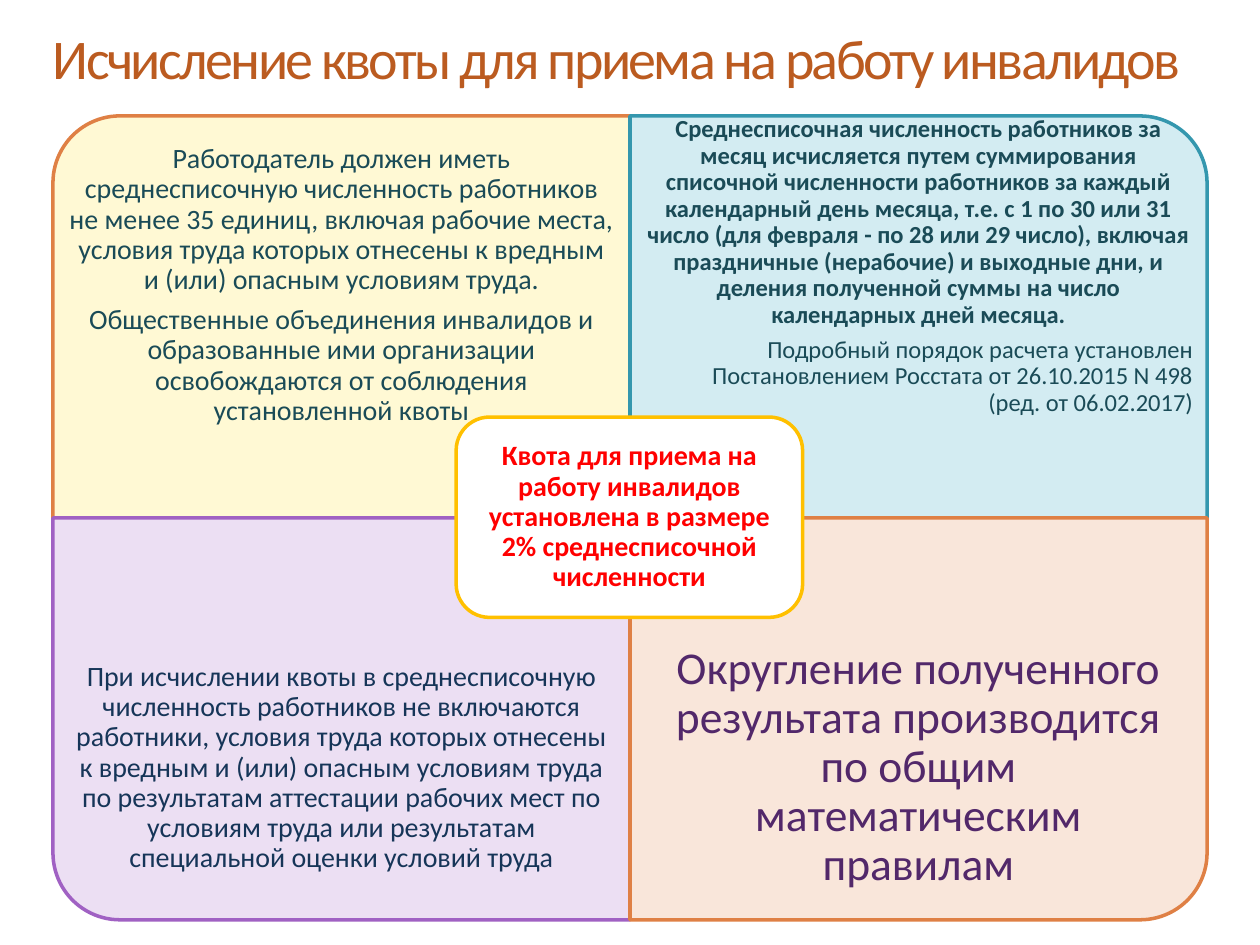
from dataclasses import dataclass

from pptx import Presentation
from pptx.dml.color import RGBColor
from pptx.enum.shapes import MSO_SHAPE
from pptx.enum.text import MSO_ANCHOR, MSO_AUTO_SIZE, PP_ALIGN
from pptx.util import Inches, Pt


@dataclass(frozen=True)
class Theme:
    font: str = "Calibri"
    title: str = "BB5B20"
    orange: str = "DF8045"
    teal: str = "3497AE"
    purple: str = "A061C3"
    gold: str = "FFC000"
    yellow_fill: str = "FFF9D4"
    teal_fill: str = "D3ECF2"
    purple_fill: str = "ECDFF3"
    orange_fill: str = "F9E6DA"
    white: str = "FFFFFF"
    teal_text: str = "1A4B57"
    navy_text: str = "163558"
    plum_text: str = "52286A"
    red_text: str = "FF0000"
    title_size: int = 32
    large_size: int = 26
    body_size: int = 16
    small_size: int = 14
    line_width: int = 2


theme = Theme()


def add_panel(kind, left, top, width, height, fill, line):
    shape = slide.shapes.add_shape(
        kind, Inches(left), Inches(top), Inches(width), Inches(height))
    shape.shadow.inherit = False
    shape.fill.solid()
    shape.fill.fore_color.rgb = RGBColor.from_string(fill)
    shape.line.color.rgb = RGBColor.from_string(line)
    shape.line.width = Pt(theme.line_width)
    return shape


def write_text(shape, paragraphs, size, color, inset):
    """Fill a shape with (text, alignment, bold) paragraphs."""
    frame = shape.text_frame
    frame.word_wrap = True
    frame.vertical_anchor = MSO_ANCHOR.MIDDLE
    frame.margin_left = frame.margin_right = Inches(inset)
    frame.margin_top = frame.margin_bottom = Inches(inset)
    for index, (text, alignment, bold) in enumerate(paragraphs):
        paragraph = frame.add_paragraph() if index else frame.paragraphs[0]
        paragraph.text = text
        paragraph.alignment = alignment
        paragraph.line_spacing = 0.9
        if index < len(paragraphs) - 1:
            paragraph.space_after = Pt(round(size * 0.35, 1))
        paragraph.font.name = theme.font
        paragraph.font.size = Pt(size)
        paragraph.font.bold = bold
        paragraph.font.color.rgb = RGBColor.from_string(color)


presentation = Presentation()
presentation.slide_width = Inches(10)
presentation.slide_height = Inches(7.5)
slide = presentation.slides.add_slide(presentation.slide_layouts[5])

# Title
title = slide.shapes.title
title.left, title.top = Inches(0.42), Inches(0.25)
title.width, title.height = Inches(9.17), Inches(0.48)
write_text(title, [("Исчисление квоты для приема на работу инвалидов", PP_ALIGN.LEFT, False)],
           theme.title_size, theme.title, 0)
title.text_frame.auto_size = MSO_AUTO_SIZE.NONE
title.text_frame.paragraphs[0].runs[0].font._element.set("spc", "-150")

# Four quadrants: column, row, rotation, fill, line, text top, inset, size, colour, paragraphs
left, top, width, height = 0.42, 0.92, 4.58, 3.19
text_height = 2.39
quadrants = [
    (0, 0, 270, theme.yellow_fill, theme.orange, 1.07, 0.12,
     theme.body_size, theme.teal_text, [
         ("Работодатель должен иметь среднесписочную численность работников "
          "не менее 35 единиц, включая рабочие места, условия труда которых "
          "отнесены к вредным и (или) опасным условиям труда.", PP_ALIGN.CENTER, False),
         ("Общественные объединения инвалидов и образованные ими организации "
          "освобождаются от соблюдения установленной квоты", PP_ALIGN.CENTER, False)]),
    (1, 0, 0, theme.teal_fill, theme.teal, 0.92, 0.11,
     theme.small_size, theme.teal_text, [
         ("Среднесписочная численность работников за месяц исчисляется путем "
          "суммирования списочной численности работников за каждый календарный "
          "день месяца, т.е. с 1 по 30 или 31 число (для февраля - по 28 или 29 "
          "число), включая праздничные (нерабочие) и выходные дни, и деления "
          "полученной суммы на число календарных дней месяца.", PP_ALIGN.CENTER, True),
         ("Подробный порядок расчета установлен Постановлением Росстата "
          "от 26.10.2015 N 498\v(ред. от 06.02.2017)", PP_ALIGN.RIGHT, False)]),
    (0, 1, 180, theme.purple_fill, theme.purple, 4.9, 0.12,
     theme.body_size, theme.navy_text, [
         ("При исчислении квоты в среднесписочную численность работников не "
          "включаются работники, условия труда которых отнесены к вредным и "
          "(или) опасным условиям труда по результатам аттестации рабочих мест "
          "по условиям труда или результатам специальной оценки условий труда",
          PP_ALIGN.CENTER, False)]),
    (1, 1, 90, theme.orange_fill, theme.orange, 4.9, 0.2,
     theme.large_size, theme.plum_text, [
         ("Округление полученного результата производится по общим "
          "математическим правилам", PP_ALIGN.CENTER, False)]),
]
for column, row, rotation, fill, line, text_top, inset, size, color, paragraphs in quadrants:
    x, y = left + column * width, top + row * height
    # A quarter turn swaps width and height about the same centre
    swap = (width - height) / 2 if rotation % 180 else 0
    panel = add_panel(MSO_SHAPE.ROUND_1_RECTANGLE, x + swap, y - swap,
                      width - 2 * swap, height + 2 * swap, fill, line)
    panel.rotation = rotation
    text_box = slide.shapes.add_textbox(
        Inches(x), Inches(text_top), Inches(width), Inches(text_height))
    write_text(text_box, paragraphs, size, color, inset)

# Central quota statement
quota = add_panel(MSO_SHAPE.ROUNDED_RECTANGLE, 3.62, 3.31, 2.75, 1.59,
                  theme.white, theme.gold)
write_text(quota, [("Квота для приема на работу инвалидов установлена в размере "
                    "2% среднесписочной численности", PP_ALIGN.CENTER, True)],
           theme.body_size, theme.red_text, 0.07)

presentation.save("out.pptx")
